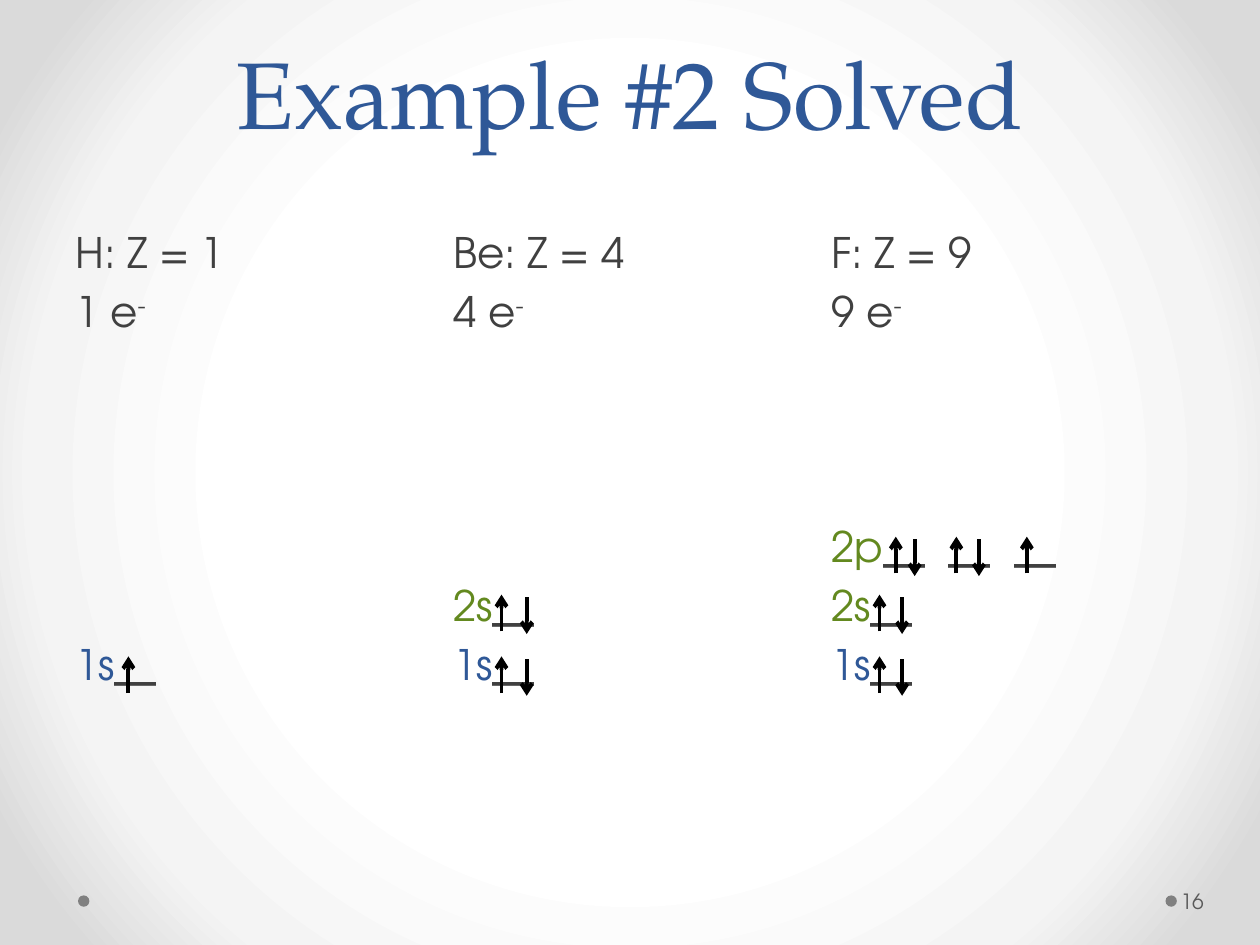
from collections import namedtuple
from dataclasses import dataclass

from lxml import etree
from pptx import Presentation
from pptx.dml.color import RGBColor
from pptx.enum.shapes import MSO_CONNECTOR, MSO_SHAPE
from pptx.enum.text import MSO_ANCHOR, PP_ALIGN
from pptx.oxml.ns import qn
from pptx.util import Pt

STRAIGHT = MSO_CONNECTOR.STRAIGHT
OVAL = MSO_SHAPE.OVAL
TOP, MIDDLE, BOTTOM = MSO_ANCHOR.TOP, MSO_ANCHOR.MIDDLE, MSO_ANCHOR.BOTTOM
LEFT, CENTER = PP_ALIGN.LEFT, PP_ALIGN.CENTER

Box = namedtuple("Box", "left top width height")


@dataclass(frozen=True)
class Theme:
    heading_font: str = "TeX Gyre Pagella"
    body_font: str = "TeX Gyre Adventor"
    title_size: float = 54
    body_size: float = 24
    number_size: float = 12
    title: str = "2F5897"
    text: str = "404040"
    first_shell: str = "2F5897"
    second_shell: str = "63891F"
    number: str = "595959"
    dot: str = "808080"
    arrow: str = "000000"
    background: tuple = ((50, "FFFFFF"), (76, "F4F4F4"), (92, "DADADA"))


THEME = Theme()
INSET = 7.2
COLUMN_WIDTH = 216
TAB_STOPS = (COLUMN_WIDTH, 2 * COLUMN_WIDTH, 499, 536.4)
LINE_GAP = 4.8
LINE_PITCH = 33.66
ARROW_LENGTH = 21

RUN_COLORS = {
    "plain": THEME.text,
    "charge": THEME.text,
    "orbital": THEME.text,
    "first": THEME.first_shell,
    "second": THEME.second_shell,
}
ELEMENTS = (("H", 1), ("Be", 4), ("F", 9))
FIRST_LEVEL = [("1s", "first"), ("__", "orbital")]
SECOND_LEVEL = [("2s", "second"), ("__", "orbital")]
P_LEVEL = [("2p", "second"), ("__\t__\t__", "orbital")]
ROWS = (
    (0, [[(f"{symbol}: Z = {number}", "plain")] for symbol, number in ELEMENTS]),
    (0, [[(f"{number} e", "plain"), ("-", "charge")] for _, number in ELEMENTS]),
    (3, [[], [], P_LEVEL]),
    (0, [[], SECOND_LEVEL, SECOND_LEVEL]),
    (0, [FIRST_LEVEL, FIRST_LEVEL, FIRST_LEVEL]),
)
ELECTRONS = (
    (0, 249.1, (30.2,), ()),
    (1, 249.1, (27.4,), (41.8,)),
    (1, 213.8, (27.4,), (41.8,)),
    (2, 249.1, (27.4,), (40.3,)),
    (2, 213.8, (27.4,), (40.3,)),
    (2, 180.7, (36.7, 71.3, 111.6), (47.5, 84.2)),
)
DOWN_SHIFT = 1.5


def points(box):
    return [Pt(value) for value in box]


def add_text_frame(slide, box, anchor=TOP, left_inset=INSET):
    frame = slide.shapes.add_textbox(*points(box)).text_frame
    formats = {"word_wrap": True, "vertical_anchor": anchor, "margin_left": Pt(left_inset)}
    for name, value in formats.items():
        setattr(frame, name, value)
    return frame


def add_run(paragraph, text, font_name, size, color, bold=False):
    run = paragraph.add_run()
    run.text = text
    for name, value in {"name": font_name, "size": Pt(size), "bold": bold}.items():
        setattr(run.font, name, value)
    run.font.color.rgb = RGBColor.from_string(color)
    return run


def draw_background(slide):
    slide.background.fill.gradient()
    gradient = slide._element.find(".//" + qn("a:gradFill"))
    for child in list(gradient):
        gradient.remove(child)
    stops = etree.SubElement(gradient, qn("a:gsLst"))
    for position, color in THEME.background:
        stop = etree.SubElement(stops, qn("a:gs"), pos=str(position * 1000))
        etree.SubElement(stop, qn("a:srgbClr"), val=color)
    circle = etree.SubElement(gradient, qn("a:path"), path="circle")
    etree.SubElement(circle, qn("a:fillToRect"), l="50000", t="50000", r="50000", b="50000")


def draw_title(slide, box):
    paragraph = add_text_frame(slide, box, BOTTOM).paragraphs[0]
    for name, value in {"alignment": CENTER, "line_spacing": Pt(58)}.items():
        setattr(paragraph, name, value)
    add_run(paragraph, "Example #2 Solved", THEME.heading_font, THEME.title_size, THEME.title)


def add_tab_stops(paragraph):
    tabs = etree.SubElement(paragraph._p.get_or_add_pPr(), qn("a:tabLst"))
    for position in TAB_STOPS:
        etree.SubElement(tabs, qn("a:tab"), pos=str(int(Pt(position))), algn="l")


def draw_configurations(slide, box):
    frame = add_text_frame(slide, box)
    for index, (skipped_lines, cells) in enumerate(ROWS):
        paragraph = frame.add_paragraph() if index else frame.paragraphs[0]
        space = Pt(LINE_GAP + skipped_lines * LINE_PITCH)
        for name, value in {"alignment": LEFT, "space_before": space}.items():
            setattr(paragraph, name, value)
        add_tab_stops(paragraph)
        for column, cell in enumerate(cells):
            tab = [("\t", "plain")] if column else []
            for text, kind in tab + cell:
                run = add_run(paragraph, text, THEME.body_font, THEME.body_size,
                              RUN_COLORS[kind], kind == "orbital")
                if kind == "charge":
                    run._r.get_or_add_rPr().set("baseline", "30000")


def add_arrow(slide, x, start, end):
    connector = slide.shapes.add_connector(STRAIGHT, Pt(x), Pt(start), Pt(x), Pt(end))
    connector.line.width = Pt(2.25)
    connector.line.color.rgb = RGBColor.from_string(THEME.arrow)
    etree.SubElement(connector.line._get_or_add_ln(), qn("a:tailEnd"), type="arrow")
    etree.SubElement(connector._element.spPr, qn("a:effectLst"))


def draw_electrons(slide, box):
    for column, level, ups, downs in ELECTRONS:
        left = box.left + INSET + column * COLUMN_WIDTH
        top = box.top + level
        for offset in ups:
            add_arrow(slide, left + offset, top + ARROW_LENGTH, top)
        for offset in downs:
            start = top + DOWN_SHIFT
            add_arrow(slide, left + offset, start, start + ARROW_LENGTH)


def draw_footer(slide, box):
    diameter = 6.5
    dot_top = box.top + (box.height - diameter) / 2
    for left in (box.left, box.left + 621.4):
        dot = slide.shapes.add_shape(OVAL, *points((left, dot_top, diameter, diameter)))
        dot.shadow.inherit = False
        dot.fill.solid()
        dot.fill.fore_color.rgb = RGBColor.from_string(THEME.dot)
        dot.line.fill.background()
    number_width = 44
    number_box = Box(box.left + box.width - number_width, box.top, number_width, box.height)
    paragraph = add_text_frame(slide, number_box, MIDDLE, 2.2).paragraphs[0]
    add_run(paragraph, "16", THEME.body_font, THEME.number_size, THEME.number)


def main():
    presentation = Presentation()
    presentation.slide_width, presentation.slide_height = Pt(720), Pt(540)
    slide = presentation.slides.add_slide(presentation.slide_layouts[6])
    body = Box(36, 126, 648, 356.4)
    draw_background(slide)
    draw_title(slide, Box(36, 2.2, 648, 86.4))
    draw_configurations(slide, body)
    draw_electrons(slide, body)
    draw_footer(slide, Box(44.6, 500.4, 671.8, 29))
    presentation.save("out.pptx")


if __name__ == "__main__":
    main()
